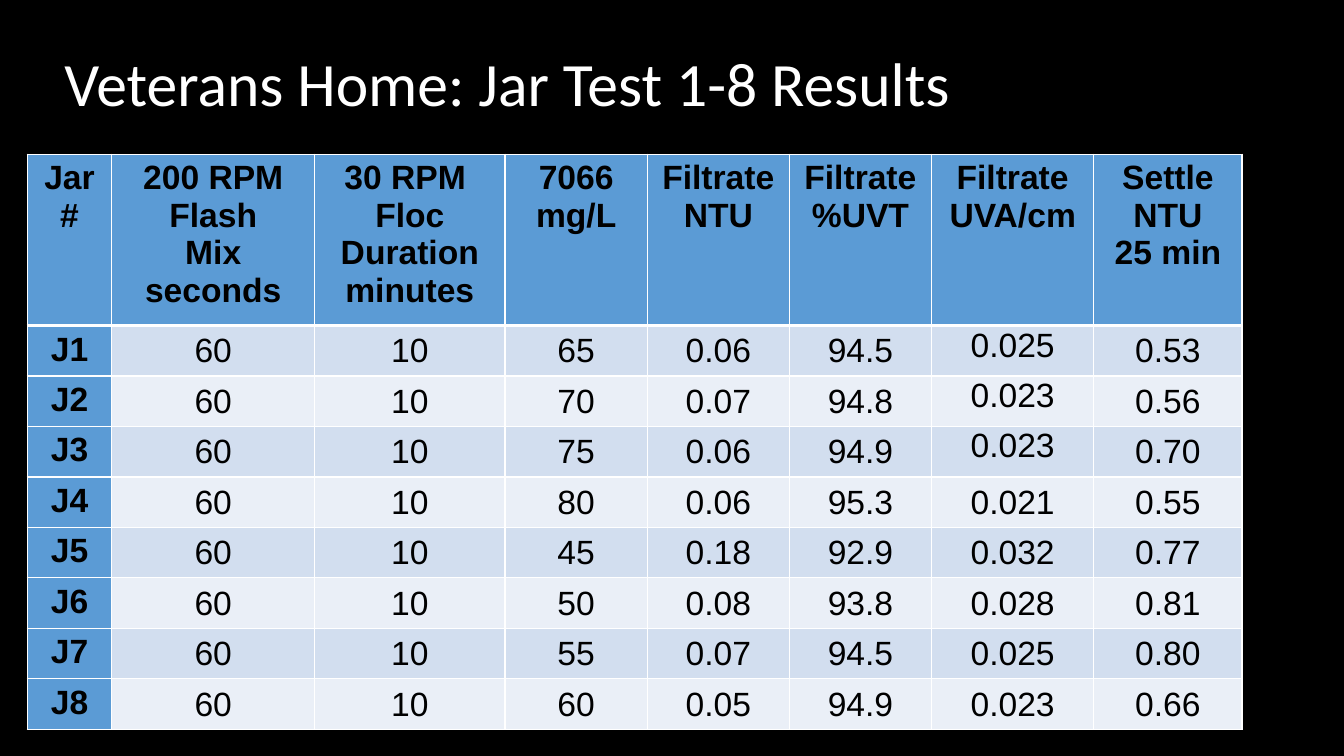
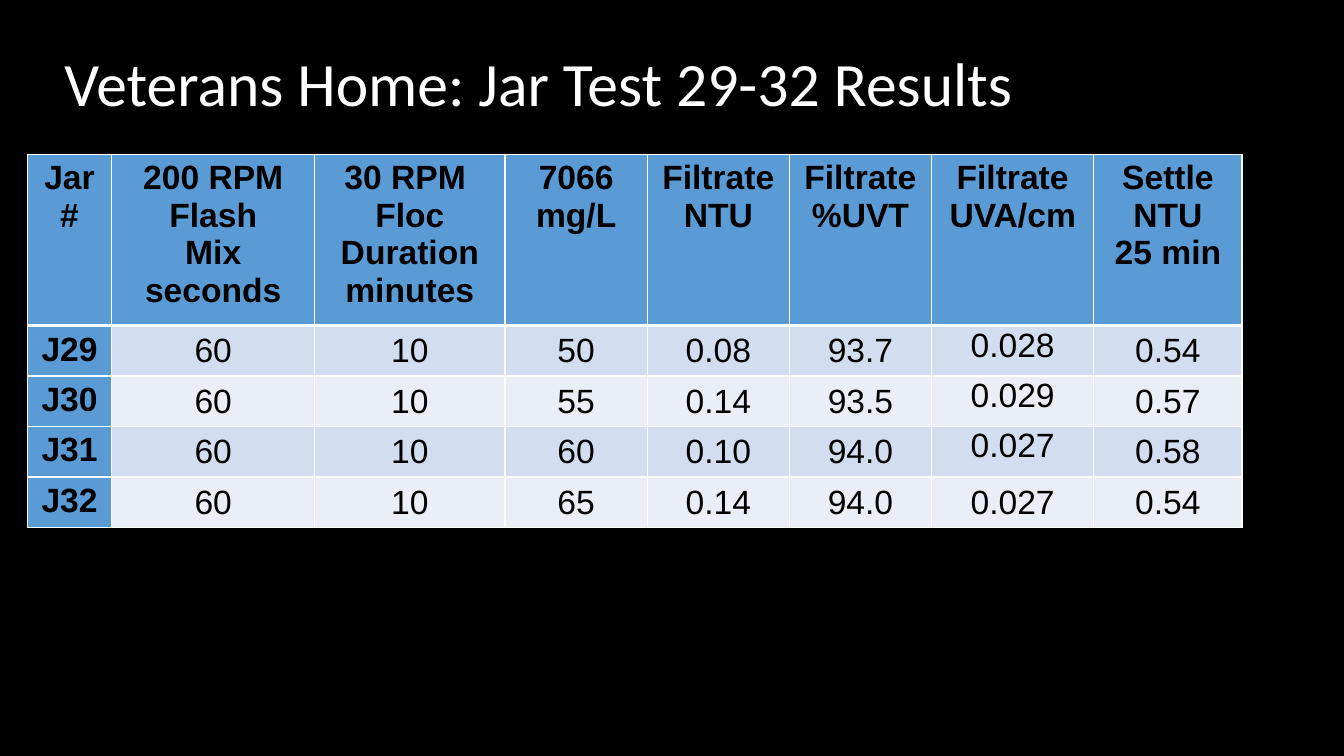
from dataclasses import dataclass

from lxml.etree import SubElement
from pptx import Presentation
from pptx.dml.color import RGBColor
from pptx.enum.text import MSO_ANCHOR, PP_ALIGN
from pptx.oxml.ns import qn
from pptx.util import Inches, Pt


@dataclass(frozen=True)
class Theme:
    background: RGBColor = RGBColor.from_string("000000")
    title_color: RGBColor = RGBColor.from_string("FFFFFF")
    cell_text: RGBColor = RGBColor.from_string("000000")
    header_fill: RGBColor = RGBColor.from_string("5B9BD5")
    band_fills: tuple = (RGBColor.from_string("D2DEEF"), RGBColor.from_string("EAEFF7"))
    border: str = "FFFFFF"
    thin: Pt = Pt(1)
    thick: Pt = Pt(3)
    title_font: str = "Calibri"
    title_size: Pt = Pt(44)
    table_font: str = "Arial"
    table_size: Pt = Pt(24)


theme = Theme()

# Table layout and content
column_widths = [0.84, 2.01, 1.89, 1.41, 1.41, 1.41, 1.61, 1.47]
headers = [
    "Jar\n#",
    "200 RPM\nFlash\nMix\nseconds",
    "30 RPM \nFloc\nDuration\nminutes",
    "7066\nmg/L",
    "Filtrate\nNTU",
    "Filtrate\n%UVT",
    "Filtrate\nUVA/cm",
    "Settle\nNTU\n25 min",
]
flash_seconds, floc_minutes = "60", "10"
uva_column = headers.index("Filtrate\nUVA/cm")
top_aligned_uva_rows = range(1, 4)

# Each result: 7066 dose, filtrate NTU, %UVT, UVA/cm, settled NTU
jar_tests = [
    ("Veterans Home: Jar Test 1-8 Results", 1, [
        ("65", "0.06", "94.5", "0.025", "0.53"),
        ("70", "0.07", "94.8", "0.023", "0.56"),
        ("75", "0.06", "94.9", "0.023", "0.70"),
        ("80", "0.06", "95.3", "0.021", "0.55"),
        ("45", "0.18", "92.9", "0.032", "0.77"),
        ("50", "0.08", "93.8", "0.028", "0.81"),
        ("55", "0.07", "94.5", "0.025", "0.80"),
        ("60", "0.05", "94.9", "0.023", "0.66"),
    ]),
    ("Veterans Home: Jar Test 29-32 Results", 29, [
        ("50", "0.08", "93.7", "0.028", "0.54"),
        ("55", "0.14", "93.5", "0.029", "0.57"),
        ("60", "0.10", "94.0", "0.027", "0.58"),
        ("65", "0.14", "94.0", "0.027", "0.54"),
    ]),
]


def set_borders(cell, top, bottom):
    """Draw the four cell borders; must run before the fill is set."""
    properties = cell._tc.get_or_add_tcPr()
    widths = {"a:lnL": theme.thin, "a:lnR": theme.thin, "a:lnT": top, "a:lnB": bottom}
    for tag, width in widths.items():
        line = SubElement(properties, qn(tag), w=str(int(width)))
        fill = SubElement(line, qn("a:solidFill"))
        SubElement(fill, qn("a:srgbClr"), val=theme.border)


def style_paragraph(paragraph, name, size, color, bold=False):
    paragraph.font.name = name
    paragraph.font.size = size
    paragraph.font.color.rgb = color
    paragraph.font.bold = bold


presentation = Presentation()
presentation.slide_width = Inches(13.33)
presentation.slide_height = Inches(7.5)
background = presentation.slide_master.background.fill
background.solid()
background.fore_color.rgb = theme.background
blank_layout = presentation.slide_layouts[6]

for title, first_jar, results in jar_tests:
    slide = presentation.slides.add_slide(blank_layout)

    # Title
    title_box = slide.shapes.add_textbox(Inches(0.54), Inches(0.13), Inches(11.88), Inches(1.45))
    title_frame = title_box.text_frame
    title_frame.word_wrap = True
    title_frame.vertical_anchor = MSO_ANCHOR.MIDDLE
    title_frame.text = title
    title_paragraph = title_frame.paragraphs[0]
    title_paragraph.line_spacing = 0.9
    style_paragraph(title_paragraph, theme.title_font, theme.title_size, theme.title_color)

    # Results table
    rows = [headers] + [
        (f"J{jar}", flash_seconds, floc_minutes, *result)
        for jar, result in enumerate(results, first_jar)
    ]
    table_shape = slide.shapes.add_table(
        len(rows), len(headers), Inches(0.27), Inches(1.53),
        Inches(sum(column_widths)), Inches(0.41 * len(rows)))
    table = table_shape.table
    table.horz_banding = False
    for column, width in zip(table.columns, column_widths):
        column.width = Inches(width)

    for row_index, values in enumerate(rows):
        for column_index, value in enumerate(values):
            cell = table.cell(row_index, column_index)
            is_header = row_index == 0 or column_index == 0
            set_borders(cell,
                        top=theme.thick if row_index == 1 else theme.thin,
                        bottom=theme.thick if row_index == 0 else theme.thin)
            cell.fill.solid()
            if is_header:
                cell.fill.fore_color.rgb = theme.header_fill
            else:
                cell.fill.fore_color.rgb = theme.band_fills[(row_index - 1) % 2]
                cell.margin_left = cell.margin_right = cell.margin_top = Inches(0.01)
                cell.margin_bottom = 0
                if column_index != uva_column or row_index not in top_aligned_uva_rows:
                    cell.vertical_anchor = MSO_ANCHOR.MIDDLE
            cell.text = value
            for paragraph in cell.text_frame.paragraphs:
                paragraph.alignment = PP_ALIGN.CENTER
                style_paragraph(paragraph, theme.table_font, theme.table_size,
                                theme.cell_text, bold=is_header)

    # Room for the rows once they grow to fit their text
    table_shape.height = Inches(1.7 + 0.5 * len(results))

presentation.save("out.pptx")
